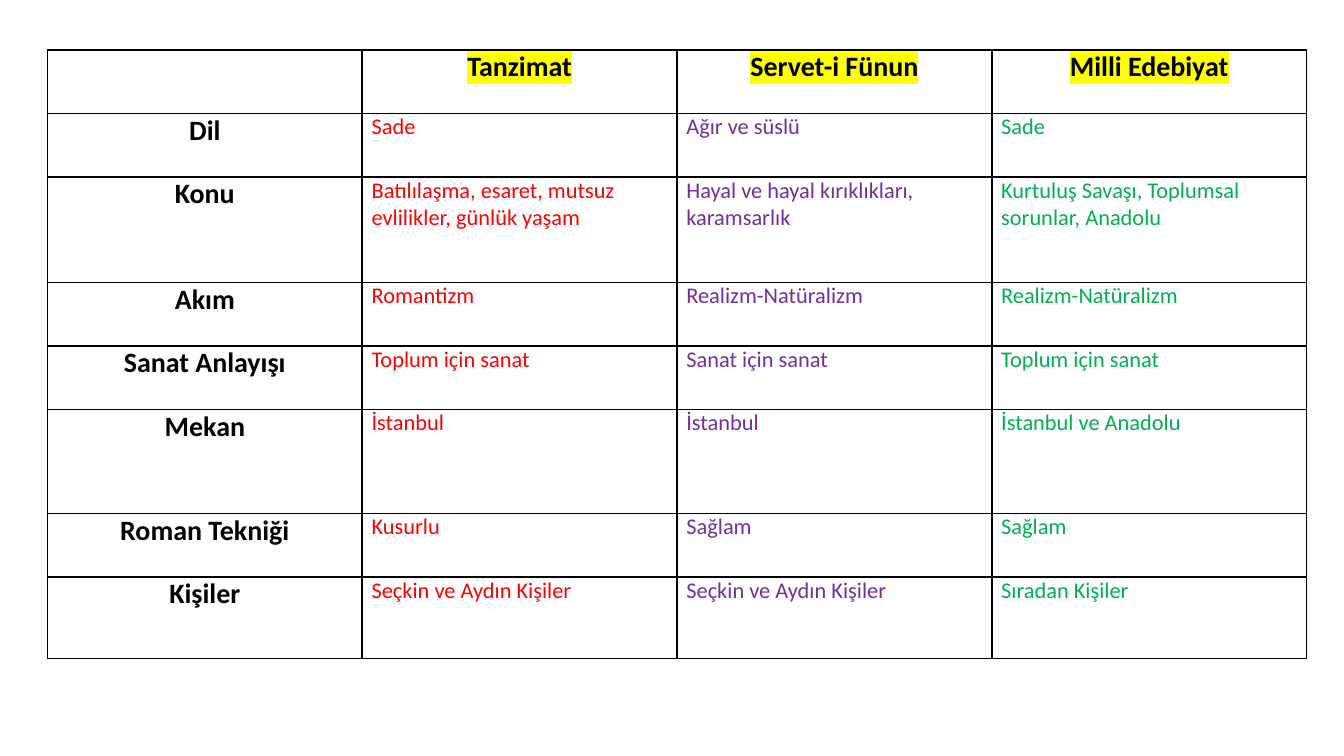
from lxml.etree import SubElement
from pptx import Presentation
from pptx.dml.color import RGBColor
from pptx.enum.text import PP_ALIGN
from pptx.oxml.ns import qn
from pptx.util import Inches, Pt

BLACK = RGBColor(0x00, 0x00, 0x00)
WHITE = RGBColor(0xFF, 0xFF, 0xFF)
YELLOW = RGBColor(0xFF, 0xFF, 0x00)
RED = RGBColor(0xFF, 0x00, 0x00)
PURPLE = RGBColor(0x70, 0x30, 0xA0)
GREEN = RGBColor(0x00, 0xB0, 0x50)

PERIODS = ["Tanzimat", "Servet-i Fünun", "Milli Edebiyat"]
PERIOD_COLORS = [RED, PURPLE, GREEN]

# Topic, relative row height, one entry per period
TOPICS = [
    ("Dil", 0.47, ["Sade", "Ağır ve süslü", "Sade"]),
    ("Konu", 0.78, ["Batılılaşma, esaret, mutsuz evlilikler, günlük yaşam",
                    "Hayal ve hayal kırıklıkları, karamsarlık",
                    "Kurtuluş Savaşı, Toplumsal sorunlar, Anadolu"]),
    ("Akım", 0.47, ["Romantizm", "Realizm-Natüralizm", "Realizm-Natüralizm"]),
    ("Sanat Anlayışı", 0.47, ["Toplum için sanat", "Sanat için sanat", "Toplum için sanat"]),
    ("Mekan", 0.77, ["İstanbul", "İstanbul", "İstanbul ve Anadolu"]),
    ("Roman Tekniği", 0.47, ["Kusurlu", "Sağlam", "Sağlam"]),
    ("Kişiler", 0.6, ["Seçkin ve Aydın Kişiler", "Seçkin ve Aydın Kişiler", "Sıradan Kişiler"]),
]
HEADER_HEIGHT = 0.47


class ComparisonSlide:
    font_name = "Calibri"
    heading_size = Pt(15)
    entry_size = Pt(12)
    border_width = Pt(1)

    def __init__(self, presentation):
        self.slide = presentation.slides.add_slide(presentation.slide_layouts[6])
        self.width = presentation.slide_width
        self.height = presentation.slide_height

    def across(self, percent):
        return int(self.width * percent / 100)

    def down(self, percent):
        return int(self.height * percent / 100)

    def grid(self, left, top, width, height, row_shares, column_count):
        """Add a plain table placed in percent of the slide's size."""
        table = self.slide.shapes.add_table(
            len(row_shares), column_count, self.across(left), self.down(top),
            self.across(width), self.down(height)).table
        table.first_row = table.horz_banding = False
        for row, share in zip(table.rows, row_shares):
            row.height = int(self.down(height) * share / sum(row_shares))
        for cell in table.iter_cells():
            cell.margin_left = cell.margin_right = Inches(0.07)
            cell.margin_top = cell.margin_bottom = 0
            self.borders(cell)
            cell.fill.solid()
            cell.fill.fore_color.rgb = WHITE
        return table

    def borders(self, cell):
        properties = cell._tc.get_or_add_tcPr()
        for side in ("a:lnL", "a:lnR", "a:lnT", "a:lnB"):
            line = SubElement(properties, qn(side), w=str(self.border_width))
            fill = SubElement(line, qn("a:solidFill"))
            SubElement(fill, qn("a:srgbClr"), val=str(BLACK))

    def text(self, cell, words, size, color, bold=False, align=PP_ALIGN.LEFT):
        paragraph = cell.text_frame.paragraphs[0]
        paragraph.alignment = align
        font = paragraph.font
        font.name, font.size, font.bold = self.font_name, size, bold
        font.color.rgb = color
        run = paragraph.add_run()
        run.text = words
        return run

    def heading(self, cell, words, highlight=None):
        run = self.text(cell, words, self.heading_size, BLACK, True, PP_ALIGN.CENTER)
        if highlight is not None:
            marker = SubElement(run._r.get_or_add_rPr(), qn("a:highlight"))
            SubElement(marker, qn("a:srgbClr"), val=str(highlight))

    def entry(self, cell, words, color):
        self.text(cell, words, self.entry_size, color)


def main():
    presentation = Presentation()
    presentation.slide_width = Inches(10)
    presentation.slide_height = presentation.slide_width * 9 // 16
    page = ComparisonSlide(presentation)

    row_shares = [HEADER_HEIGHT] + [share for _, share, _ in TOPICS]
    comparison = page.grid(3.53, 6.6, 93.7, 80.5, row_shares, 1 + len(PERIODS))

    # Period names across the top
    for column, period in enumerate(PERIODS, start=1):
        page.heading(comparison.cell(0, column), period, YELLOW)

    # Topic names down the side, with the entries of each period
    for row, (topic, _, entries) in enumerate(TOPICS, start=1):
        page.heading(comparison.cell(row, 0), topic)
        for column, (words, color) in enumerate(zip(entries, PERIOD_COLORS), start=1):
            page.entry(comparison.cell(row, column), words, color)

    presentation.save("out.pptx")


if __name__ == "__main__":
    main()
